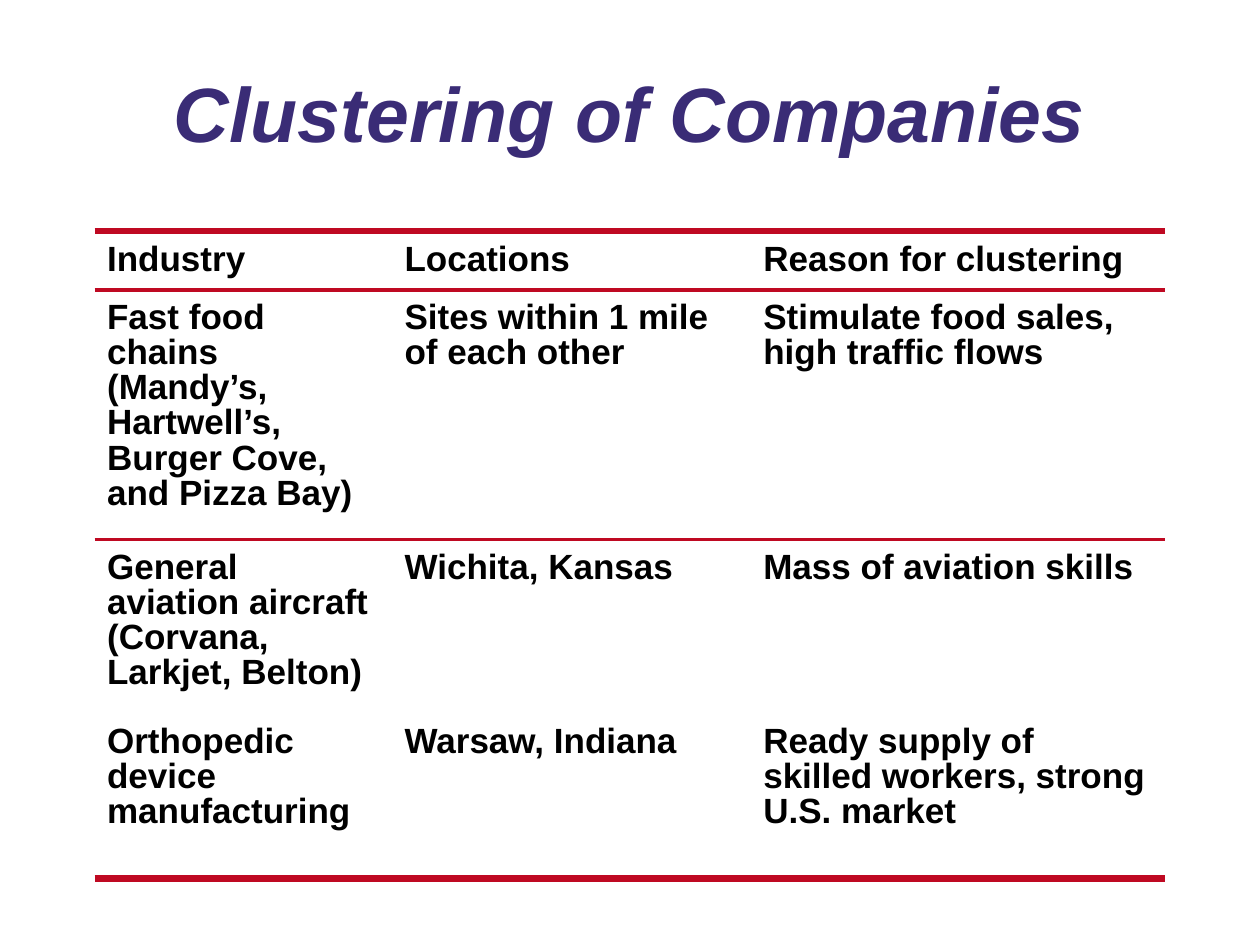
from lxml.etree import SubElement
from pptx import Presentation
from pptx.dml.color import RGBColor
from pptx.enum.text import MSO_ANCHOR as Anchor, PP_ALIGN as Align
from pptx.oxml.ns import qn
from pptx.util import Pt

FONT = "Arial"
PURPLE = RGBColor(0x3A, 0x2C, 0x76)
RED = RGBColor(0xBF, 0x09, 0x22)
BLACK = RGBColor(0, 0, 0)

NO_TABLE_STYLE = "{2D5ABB26-0587-4C30-8999-92F81FD0307C}"
THICK, THIN = Pt(4.5), Pt(2.25)
COLUMN_WIDTHS = [170, 205, 237]
ROW_HEIGHTS = [33.75, 142.5, 99.5, 79.5, 14.5]
ROWS = [
    ["Industry", "Locations", "Reason for clustering"],
    ["Fast food chains (Mandy’s, Hartwell’s, Burger Cove, and Pizza Bay)",
     "Sites within 1 mile of each other",
     "Stimulate food sales, high traffic flows"],
    ["General aviation aircraft (Corvana, Larkjet, Belton)",
     "Wichita, Kansas", "Mass of aviation skills"],
    ["Orthopedic device manufacturing", "Warsaw, Indiana",
     "Ready supply of skilled workers, strong U.S. market"],
    ["", "", ""],
]
# Rules by row: (side, width)
RULES = {
    0: [("T", THICK), ("B", THIN)],
    1: [("T", THIN)],
    4: [("B", THICK)],
}


def write_text(para, text, size, color, italic=False, align=Align.LEFT):
    para.alignment = align
    para.line_spacing = 0.9
    span = para.add_run()
    span.text = text
    font = span.font
    font.name, font.size, font.bold, font.italic = FONT, Pt(size), True, italic
    font.color.rgb = color


def add_title(page, text):
    box = page.shapes.add_textbox(Pt(54), Pt(34.5), Pt(612), Pt(65))
    frame = box.text_frame
    frame.word_wrap = True
    frame.vertical_anchor = Anchor.MIDDLE
    write_text(frame.paragraphs[0], text, 44, PURPLE, italic=True, align=Align.CENTER)


def add_rule(cell, side, width):
    line = SubElement(cell._tc.get_or_add_tcPr(), qn(f"a:ln{side}"), w=str(width))
    fill = SubElement(line, qn("a:solidFill"))
    SubElement(fill, qn("a:srgbClr"), val=str(RED))


def fill_cell(cell, text, row):
    for side, width in RULES.get(row, []):
        add_rule(cell, side, width)
    cell.fill.background()
    para = cell.text_frame.paragraphs[0]
    if not text:
        # Small type keeps the closing row low
        SubElement(para._p, qn("a:endParaRPr"), sz="400")
        return
    if row == 0:
        cell.vertical_anchor = Anchor.MIDDLE
    else:
        cell.margin_top = cell.margin_bottom = Pt(6.5)
    write_text(para, text, 20, BLACK)
    after = SubElement(para._p.get_or_add_pPr(), qn("a:spcAft"))
    SubElement(after, qn("a:spcPct"), val="40000")


def add_cluster_table(page):
    frame = page.shapes.add_table(
        len(ROWS), len(COLUMN_WIDTHS), Pt(54), Pt(132),
        Pt(sum(COLUMN_WIDTHS)), Pt(sum(ROW_HEIGHTS)))
    table = frame.table
    table.first_row = table.horz_banding = False
    table._tbl.tblPr.find(qn("a:tableStyleId")).text = NO_TABLE_STYLE
    for column, width in zip(table.columns, COLUMN_WIDTHS):
        column.width = Pt(width)
    for row, (texts, height) in enumerate(zip(ROWS, ROW_HEIGHTS)):
        table.rows[row].height = Pt(height)
        for column, text in enumerate(texts):
            fill_cell(table.cell(row, column), text, row)


def main():
    deck = Presentation()
    deck.slide_width, deck.slide_height = Pt(720), Pt(540)
    page = deck.slides.add_slide(deck.slide_layouts[6])
    add_title(page, "Clustering of Companies")
    add_cluster_table(page)
    deck.save("out.pptx")


if __name__ == "__main__":
    main()
